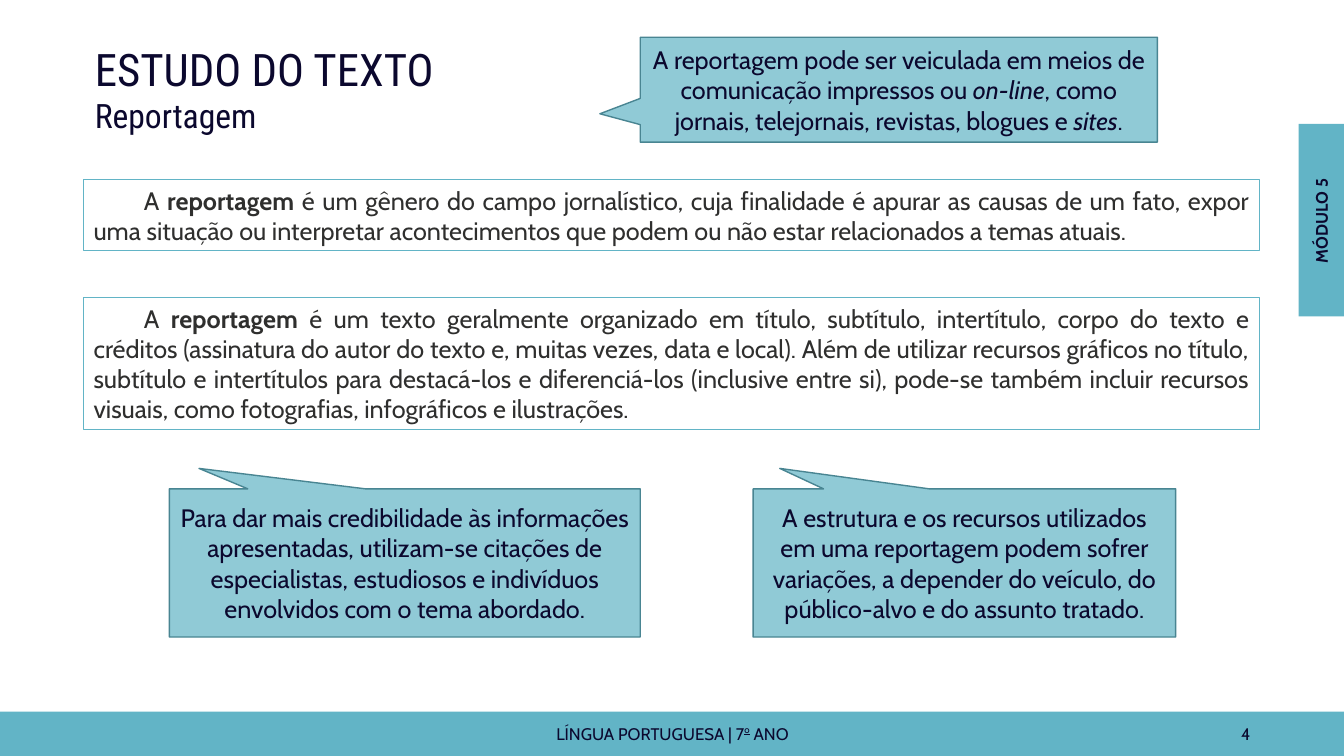
"""Build the slide on the news report genre from a Portuguese course."""
from lxml import etree
from pptx import Presentation
from pptx.dml.color import RGBColor
from pptx.enum.shapes import MSO_SHAPE
from pptx.enum.text import MSO_ANCHOR, MSO_AUTO_SIZE, PP_ALIGN
from pptx.oxml.ns import qn
from pptx.util import Inches, Pt

RECTANGLE, CALLOUT = MSO_SHAPE.RECTANGLE, MSO_SHAPE.RECTANGULAR_CALLOUT
TOP, MIDDLE = MSO_ANCHOR.TOP, MSO_ANCHOR.MIDDLE
LEFT, CENTER, RIGHT, JUSTIFY = PP_ALIGN.LEFT, PP_ALIGN.CENTER, PP_ALIGN.RIGHT, PP_ALIGN.JUSTIFY
NO_AUTOFIT = MSO_AUTO_SIZE.NONE
TEAL = RGBColor(0x62, 0xB4, 0xC6)
DARK_TEAL = RGBColor(0x49, 0x85, 0x92)
NAVY = RGBColor(0x0B, 0x08, 0x2E)
CHARCOAL = RGBColor(0x2F, 0x2F, 0x2E)

prs = Presentation()
prs.slide_width, prs.slide_height = Inches(13.33), Inches(7.5)
slide = prs.slides.add_slide(prs.slide_layouts[5])


def add_block(kind, box, fill=None, line=None, line_width=1):
    block = slide.shapes.add_shape(kind, *map(Inches, box))
    block.shadow.inherit = False
    if fill is None:
        block.fill.background()
    else:
        block.fill.solid()
        block.fill.fore_color.rgb = fill
    if line is None:
        block.line.fill.background()
    else:
        block.line.color.rgb = line
        block.line.width = Pt(line_width)
    return block


def write(holder, runs, size, color, align, anchor=MIDDLE):
    frame = holder.text_frame
    frame.word_wrap = True
    frame.vertical_anchor = anchor
    paragraph = frame.paragraphs[0]
    paragraph.alignment = align
    paragraph.font.name = "Cabin"
    paragraph.font.size = Pt(size)
    paragraph.font.color.rgb = color
    for text, style in runs:
        run = paragraph.add_run()
        run.text = text
        if style:
            setattr(run.font, style, True)
    return paragraph


add_block(RECTANGLE, (0, 7.06, 13.33, 0.45), TEAL)
add_block(RECTANGLE, (12.88, 1.23, 0.45, 1.91), TEAL)

course = slide.shapes.add_textbox(Inches(4.42), Inches(7.09), Inches(4.5), Inches(0.38))
course_line = write(course, [("LÍNGUA PORTUGUESA | 7", None), ("o", "underline"), (" ANO", None)],
                    12, NAVY, CENTER)
course_line.space_after = Pt(6)
course_line.runs[1]._r.get_or_add_rPr().set("baseline", "45000")

page = slide.shapes.add_textbox(Inches(9.42), Inches(7.09), Inches(3.08), Inches(0.38))
write(page, [("4", None)], 12, NAVY, RIGHT).space_after = Pt(6)

module = slide.shapes.add_textbox(Inches(12.15), Inches(2.04), Inches(1.91), Inches(0.3))
module.rotation = 270
write(module, [("MÓDULO 5", "bold")], 12, NAVY, CENTER, TOP)

title = slide.shapes.title
title.left, title.top, title.width, title.height = map(Inches, (0.84, 0.36, 4.88, 1.04))
title.text_frame.text = "ESTUDO DO TEXTO\nReportagem"
title.text_frame.vertical_anchor = TOP
title.text_frame.auto_size = NO_AUTOFIT
for heading, size in zip(title.text_frame.paragraphs, (32, 24)):
    heading.alignment = LEFT
    heading.font.name = "Roboto Condensed"
    heading.font.size = Pt(size)
    heading.font.color.rgb = NAVY

definitions = [
    (1.78, 0.71, " é um gênero do campo jornalístico, cuja finalidade é apurar as causas de um fato, "
     "expor uma situação ou interpretar acontecimentos que podem ou não estar relacionados a temas "
     "atuais."),
    (2.95, 1.31, " é um texto geralmente organizado em título, subtítulo, intertítulo, corpo do texto e "
     "créditos (assinatura do autor do texto e, muitas vezes, data e local). Além de utilizar recursos "
     "gráficos no título, subtítulo e intertítulos para destacá-los e diferenciá-los (inclusive entre "
     "si), pode-se também incluir recursos visuais, como fotografias, infográficos e ilustrações."),
]
for top, height, explanation in definitions:
    definition = add_block(RECTANGLE, (0.83, top, 11.66, height), line=TEAL, line_width=0.75)
    sentence = write(definition, [("A ", None), ("reportagem", "bold"), (explanation, None)],
                     18, CHARCOAL, JUSTIFY)
    indents = sentence._p.get_or_add_pPr()
    indents.set("marL", "0")
    indents.set("indent", str(Inches(0.5)))

callouts = [
    ((1.68, 4.85, 4.67, 1.47), (-0.437, -0.638),
     [("Para dar mais credibilidade às informações apresentadas, utilizam-se citações de "
       "especialistas, estudiosos e indivíduos envolvidos com o tema abordado.", None)]),
    ((6.35, 0.37, 5.13, 1.04), (-0.578, 0.23),
     [("A reportagem pode ser veiculada em meios de comunicação impressos ou ", None),
      ("on-line", "italic"), (", como jornais, telejornais, revistas, blogues e ", None),
      ("sites", "italic"), (".", None)]),
    ((7.47, 4.85, 4.19, 1.47), (-0.437, -0.638),
     [("A estrutura e os recursos utilizados em uma reportagem podem sofrer variações, a depender "
       "do veículo, do público-alvo e do assunto tratado.", None)]),
]
for box, pointer, runs in callouts:
    callout = add_block(CALLOUT, box, TEAL, DARK_TEAL)
    callout.adjustments[0], callout.adjustments[1] = pointer
    fill_color = callout._element.spPr.find(qn("a:solidFill")).find(qn("a:srgbClr"))
    etree.SubElement(fill_color, qn("a:alpha")).set("val", "70000")
    write(callout, runs, 18, NAVY, CENTER)

prs.save("out.pptx")
